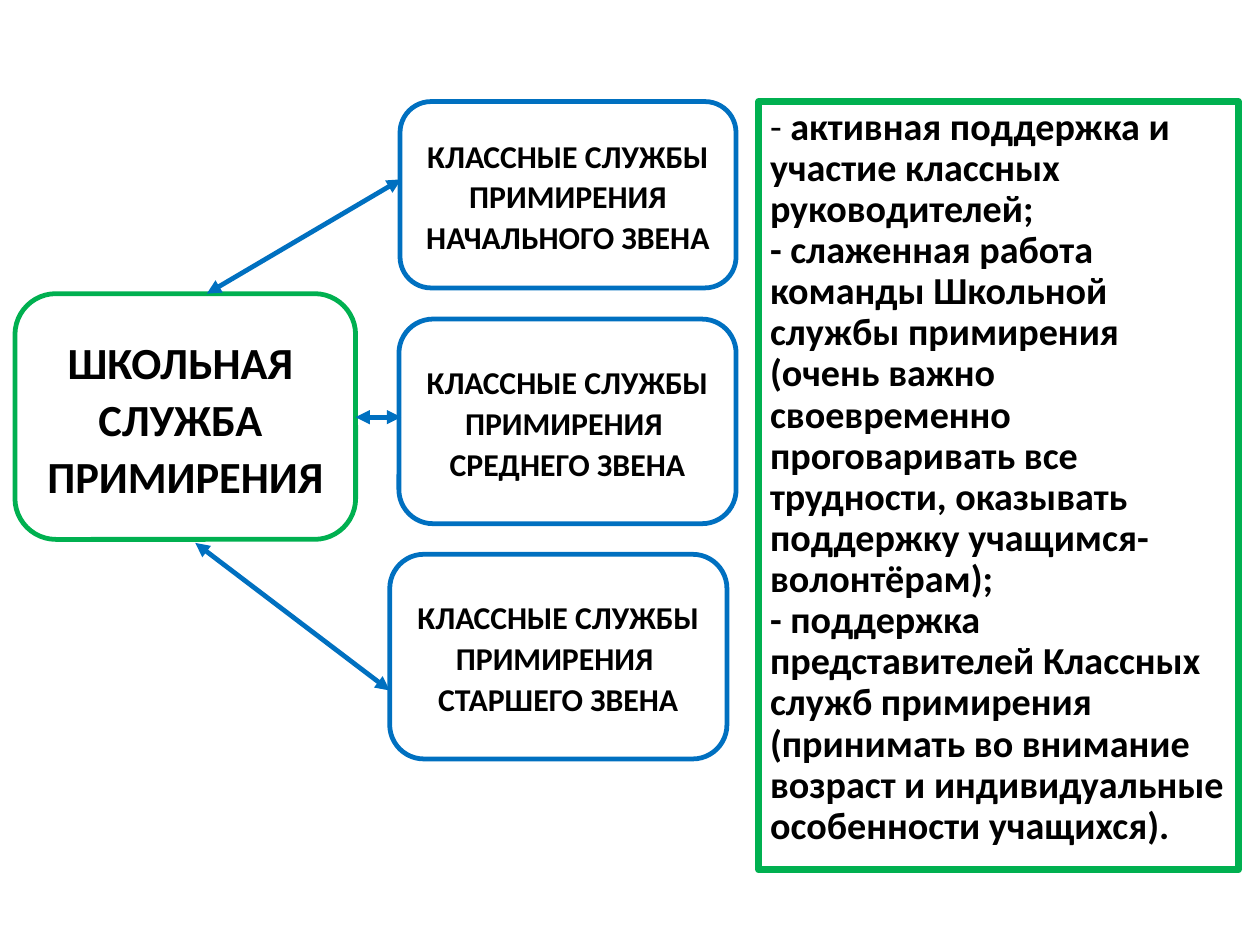
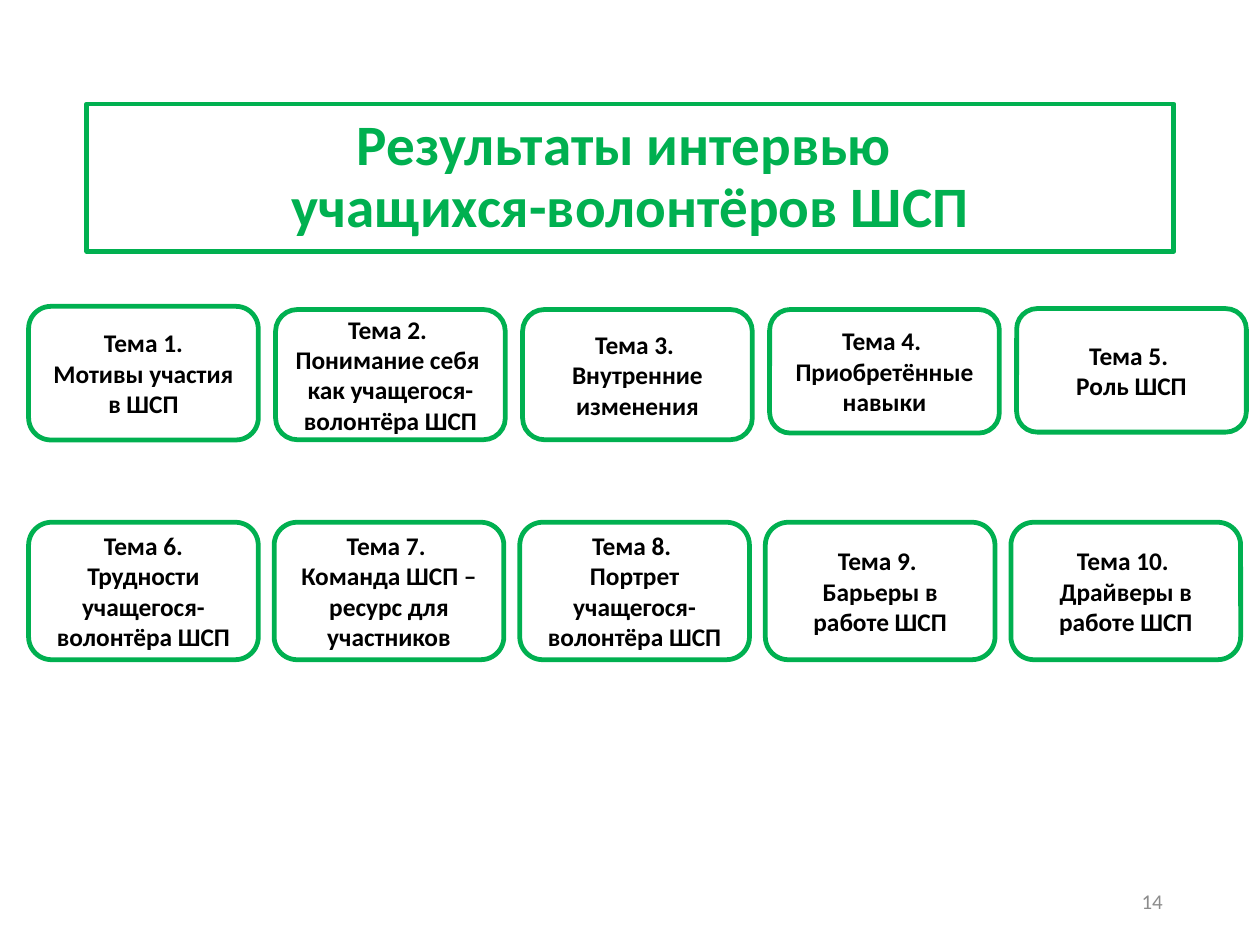
import dataclasses

import lxml.etree
import pptx
import pptx.dml.color
import pptx.enum.shapes
import pptx.enum.text
import pptx.oxml.ns
import pptx.util

Pt = pptx.util.Pt
SHAPE = pptx.enum.shapes.MSO_SHAPE
ALIGN = pptx.enum.text.PP_ALIGN
ANCHOR = pptx.enum.text.MSO_ANCHOR


@dataclasses.dataclass(frozen=True)
class Theme:
    font: str = "Calibri"
    green: str = "00B050"
    blue: str = "0070C0"
    white: str = "FFFFFF"
    black: str = "000000"
    grey: str = "8C8C8C"
    title_size: float = 36
    school_size: float = 28
    factor_size: float = 24
    class_size: float = 20
    topic_size: float = 16
    number_size: float = 13.2
    outline: float = 3
    panel_outline: float = 4.5


THEME = Theme()
SLIDE_SIZE = (793.7, 595.3)

SCHOOL = ((9.4, 185, 214.6, 154.8), ["ШКОЛЬНАЯ ", "СЛУЖБА ", "ПРИМИРЕНИЯ"])
CLASSES = [
    ((252, 64, 211.7, 117.4), ["КЛАССНЫЕ СЛУЖБЫ ПРИМИРЕНИЯ НАЧАЛЬНОГО ЗВЕНА"]),
    ((251.3, 201, 212.4, 128.9), ["КЛАССНЫЕ СЛУЖБЫ ПРИМИРЕНИЯ ", "СРЕДНЕГО ЗВЕНА"]),
    ((245.5, 349.2, 212.4, 128.9), ["КЛАССНЫЕ СЛУЖБЫ ПРИМИРЕНИЯ ", "СТАРШЕГО ЗВЕНА"]),
]
ARROWS = [
    ((252.7, 113), (130.3, 185)),
    ((252.7, 262.8), (224, 262.8)),
    ((245.5, 435), (123, 342)),
]
FACTORS = [
    "активная поддержка и участие классных руководителей;",
    "- слаженная работа команды Школьной службы примирения (очень важно "
    "своевременно проговаривать все трудности, оказывать поддержку "
    "учащимся-волонтёрам);",
    "- поддержка представителей Классных служб примирения (принимать во "
    "внимание возраст и индивидуальные особенности учащихся).",
]

TOPIC_LEFT, TOPIC_WIDTH = 18, 144.7
# Each row: horizontal step, then (top, height, paragraphs) for each topic.
TOPIC_ROWS = [
    (155.6, [
        (193, 84.2, ["Тема 1.", "Мотивы участия в ШСП"]),
        (195, 82, ["Тема 2. ", "Понимание себя ", "как учащегося-волонтёра ШСП"]),
        (195, 82, ["Тема 3. ", "Внутренние изменения"]),
        (195, 77.8, ["Тема 4. ", "Приобретённые навыки"]),
        (194.4, 77.8, ["Тема 5. ", "Роль ШСП"]),
    ]),
    (154.7, [
        (329, 86.6, paragraphs) for paragraphs in (
            ["Тема 6.", "Трудности учащегося-волонтёра ШСП"],
            ["Тема 7. ", "Команда ШСП – ресурс для участников"],
            ["Тема 8. ", "Портрет учащегося-волонтёра ШСП"],
            ["Тема 9. ", "Барьеры в работе ШСП"],
            ["Тема 10. ", "Драйверы в работе ШСП"],
        )
    ]),
]


def rgb(value):
    return pptx.dml.color.RGBColor.from_string(value)


def set_values(target, values):
    for name, value in values.items():
        setattr(target, name, value)


def format_span(span, size, color, bold):
    set_values(span.font, {"name": THEME.font, "size": Pt(size), "bold": bold})
    span.font.color.rgb = rgb(color)


def write_text(box, paragraphs, size, color=THEME.black, bold=True, align=ALIGN.CENTER,
               anchor=ANCHOR.MIDDLE, spacing=1.0, plain_lead=""):
    """Fill a box with paragraphs; plain_lead opens the first one unbolded."""
    frame = box.text_frame
    set_values(frame, {"word_wrap": True, "vertical_anchor": anchor})
    for index, text in enumerate(paragraphs):
        para = frame.add_paragraph() if index else frame.paragraphs[0]
        set_values(para, {"text": text, "alignment": align, "line_spacing": spacing})
        for span in para.runs:
            format_span(span, size, color, bold)
    if plain_lead:
        first = frame.paragraphs[0]
        lead = first.add_run()
        lead.text = plain_lead
        format_span(lead, size, color, False)
        first.runs[0]._r.addprevious(lead._r)


def add_frame(page, area, paragraphs, size, outline=THEME.green,
              kind=SHAPE.ROUNDED_RECTANGLE, weight=THEME.outline, **text_format):
    """Add a white outlined shape with text; area is left, top, width, height."""
    box = page.shapes.add_shape(kind, *map(Pt, area))
    box.shadow.inherit = False
    box.fill.solid()
    box.fill.fore_color.rgb = rgb(THEME.white)
    box.line.color.rgb = rgb(outline)
    box.line.width = Pt(weight)
    write_text(box, paragraphs, size, **text_format)


def add_double_arrow(page, start, end):
    arrow = page.shapes.add_connector(
        pptx.enum.shapes.MSO_CONNECTOR.STRAIGHT, *map(Pt, start + end))
    arrow.line.color.rgb = rgb(THEME.blue)
    arrow.line.width = Pt(THEME.outline)
    qn = pptx.oxml.ns.qn
    line = arrow.line._get_or_add_ln()
    for tag in ("a:headEnd", "a:tailEnd"):
        lxml.etree.SubElement(line, qn(tag), type="triangle")
    lxml.etree.SubElement(arrow._element.spPr, qn("a:effectLst"))


def build_structure(page):
    area, paragraphs = SCHOOL
    add_frame(page, area, paragraphs, THEME.school_size, spacing=1.07)
    for area, paragraphs in CLASSES:
        add_frame(page, area, paragraphs, THEME.class_size, THEME.blue, spacing=1.07)
    add_frame(page, (478, 64, 302, 484), FACTORS, THEME.factor_size,
              kind=SHAPE.RECTANGLE, weight=THEME.panel_outline, align=ALIGN.LEFT,
              anchor=ANCHOR.TOP, spacing=0.9, plain_lead="- ")
    for start, end in ARROWS:
        add_double_arrow(page, start, end)


def build_interview(page):
    add_frame(page, (54.7, 65.5, 684.7, 92.9),
              ["Результаты интервью \vучащихся-волонтёров ШСП"], THEME.title_size,
              kind=SHAPE.RECTANGLE, color=THEME.green, spacing=0.9)
    for step, topics in TOPIC_ROWS:
        for column, (top, height, paragraphs) in enumerate(topics):
            area = (TOPIC_LEFT + column * step, top, TOPIC_WIDTH, height)
            add_frame(page, area, paragraphs, THEME.topic_size)
    number = page.shapes.add_textbox(*map(Pt, (561, 551.5, 178.5, 31.7)))
    write_text(number, ["14"], THEME.number_size, THEME.grey, False, ALIGN.RIGHT)


def main():
    deck = pptx.Presentation()
    deck.slide_width, deck.slide_height = map(Pt, SLIDE_SIZE)
    for build in (build_structure, build_interview):
        build(deck.slides.add_slide(deck.slide_layouts[6]))
    deck.save("out.pptx")


if __name__ == "__main__":
    main()
